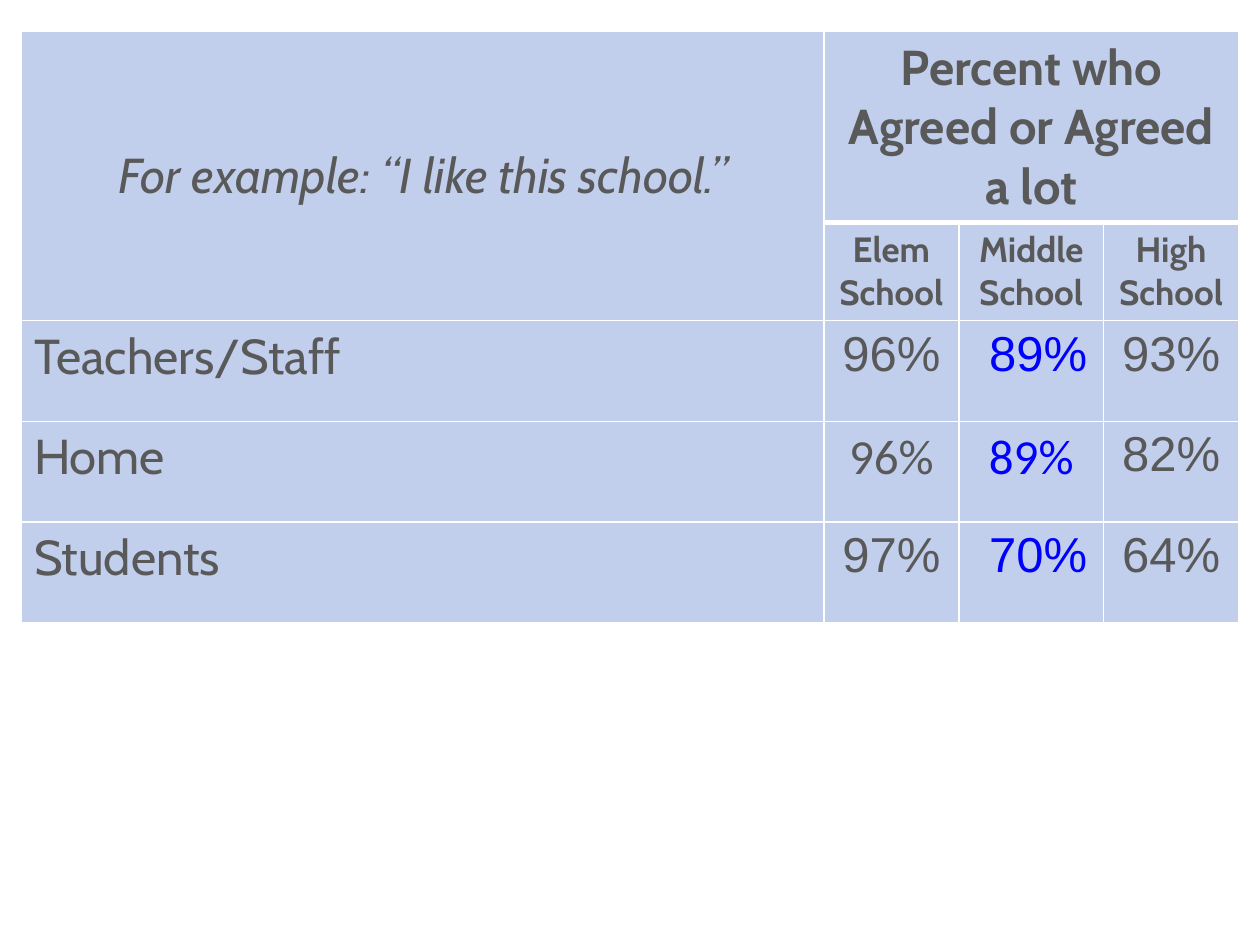
import pptx
import pptx.util
import pptx.dml.color
import pptx.enum.text
import pptx.oxml
import pptx.oxml.ns
from pptx.util import Inches

GRAY = pptx.dml.color.RGBColor(0x59, 0x59, 0x59)
BLUE = pptx.dml.color.RGBColor(0x00, 0x00, 0xFF)
PALE_BLUE = pptx.dml.color.RGBColor(0xC1, 0xCE, 0xEC)
WHITE = pptx.dml.color.RGBColor(0xFF, 0xFF, 0xFF)

CENTER = pptx.enum.text.PP_ALIGN.CENTER
LEFT = pptx.enum.text.PP_ALIGN.LEFT


def write_cell(cell, text, alignment=CENTER, color=GRAY, **font_values):
    """Put text in a cell, one paragraph per line."""
    cell.text = text
    values = {"size": pptx.util.Pt(28), "name": "Cabin", "bold": False,
              "italic": False} | font_values
    for paragraph in cell.text_frame.paragraphs:
        paragraph.alignment = alignment
        for run in paragraph.runs:
            for name, value in values.items():
                setattr(run.font, name, value)
            run.font.color.rgb = color


def add_border(cell, side, points):
    """Append one white border line to a cell."""
    width = pptx.util.Pt(points)
    cell._tc.get_or_add_tcPr().append(pptx.oxml.parse_xml(
        f'<a:ln{side} {pptx.oxml.ns.nsdecls("a")} w="{width}">'
        f'<a:solidFill><a:srgbClr val="{WHITE}"/></a:solidFill></a:ln{side}>'))


presentation = pptx.Presentation()
presentation.slide_width = Inches(10)
presentation.slide_height = Inches(7.5)
slide = presentation.slides.add_slide(presentation.slide_layouts[6])

# Table grid
column_widths = [6.37, 1.07, 1.15, 1.07]
row_heights = [1.23, 0.61, 0.8, 0.8, 0.8]
table = slide.shapes.add_table(
    len(row_heights), len(column_widths), Inches(0.17), Inches(0.25),
    Inches(sum(column_widths)), Inches(sum(row_heights))).table
for column, width in zip(table.columns, column_widths):
    column.width = Inches(width)
for row, height in zip(table.rows, row_heights):
    row.height = Inches(height)

# Borders and fill, with a thick line under the percent heading
for row_index in range(len(row_heights)):
    for column_index in range(len(column_widths)):
        cell = table.cell(row_index, column_index)
        for side in "LRTB":
            thick = column_index > 0 and (row_index, side) in [(0, "B"), (1, "T")]
            add_border(cell, side, 3 if thick else 1)
        cell.fill.solid()
        cell.fill.fore_color.rgb = PALE_BLUE

# Headings
statement = table.cell(0, 0)
statement.merge(table.cell(1, 0))
statement.vertical_anchor = pptx.enum.text.MSO_ANCHOR.MIDDLE
write_cell(statement, "For example: “I like this school.”", italic=True)

percent_heading = table.cell(0, 1)
percent_heading.merge(table.cell(0, 3))
write_cell(percent_heading, "Percent who Agreed or Agreed a lot", bold=True)

for column_index, level in enumerate(
        ["Elem\nSchool", "Middle School", "High School"], start=1):
    write_cell(table.cell(1, column_index), level, bold=True,
               size=pptx.util.Pt(20))

# Results by group: label, percentages, font of each percentage
results = [
    ("Teachers/Staff", ["96%", " 89%", "93%"], ["Arial", "Arial", "Arial"]),
    ("Home", ["96%", "89%", "82%"], ["Calibri", "Calibri", "Arial"]),
    ("Students", ["97%", " 70%", "64%"], ["Arial", "Arial", "Arial"]),
]
for row_index, (group, percentages, fonts) in enumerate(results, start=2):
    write_cell(table.cell(row_index, 0), group, alignment=LEFT)
    for column_index, (percentage, font) in enumerate(
            zip(percentages, fonts), start=1):
        write_cell(table.cell(row_index, column_index), percentage, name=font,
                   color=BLUE if column_index == 2 else GRAY)

presentation.save("out.pptx")
